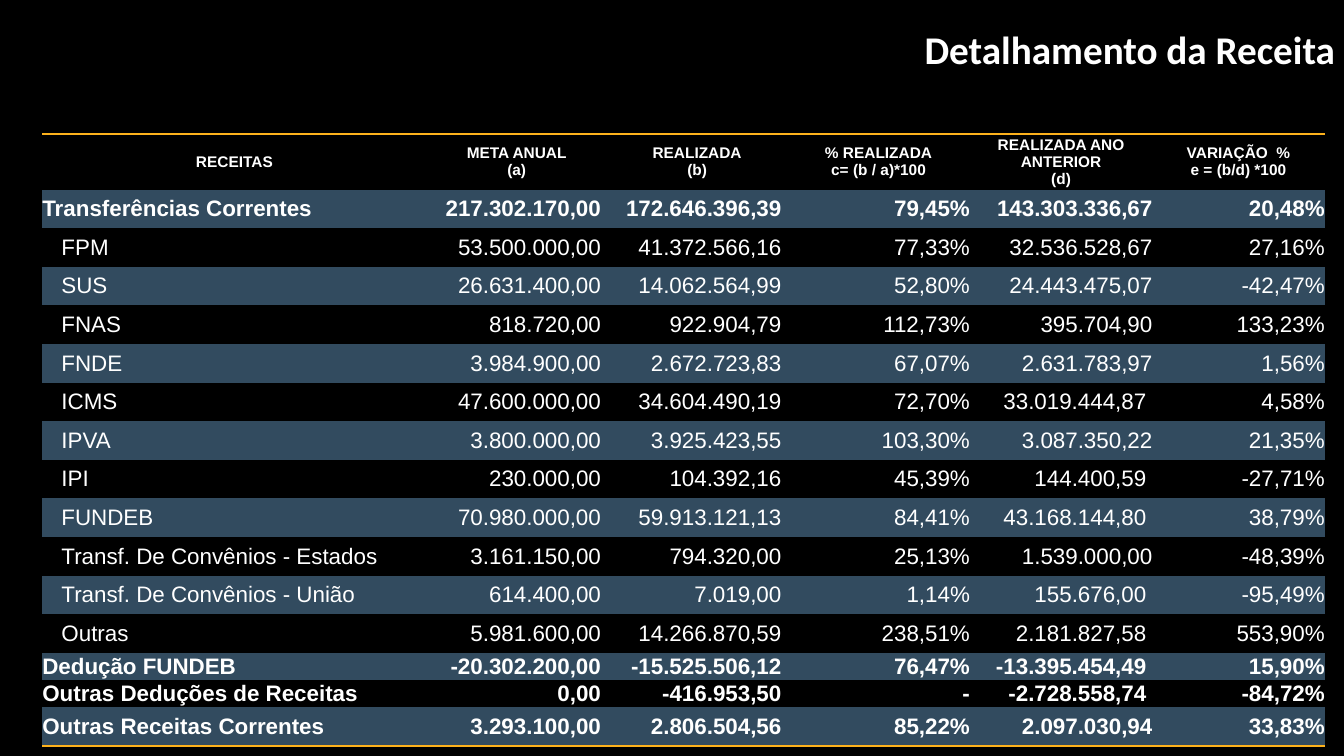
from lxml.etree import SubElement
from pptx import Presentation
from pptx.dml.color import RGBColor
from pptx.enum.text import MSO_ANCHOR, MSO_AUTO_SIZE, PP_ALIGN
from pptx.oxml.ns import qn
from pptx.util import Inches, Pt

COLORS = {"background": "000000", "text": "FFFFFF", "band": "324B5F", "rule": "FCB11C"}
NO_GRID_STYLE = "{2D5ABB26-0587-4C30-8999-92F81FD0307C}"

HEADERS = [
    "RECEITAS",
    "META ANUAL\n(a)",
    "REALIZADA\n(b)",
    "% REALIZADA\nc= (b / a)*100",
    "REALIZADA ANO ANTERIOR\n(d)",
    "VARIAÇÃO  %\ne = (b/d) *100",
]
REVENUES = [
    ["Transferências Correntes", "217.302.170,00", "172.646.396,39", "79,45%", "143.303.336,67", "20,48%"],
    ["FPM", "53.500.000,00", "41.372.566,16", "77,33%", "32.536.528,67", "27,16%"],
    ["SUS", "26.631.400,00", "14.062.564,99", "52,80%", "24.443.475,07", "-42,47%"],
    ["FNAS", "818.720,00", "922.904,79", "112,73%", "395.704,90", "133,23%"],
    ["FNDE", "3.984.900,00", "2.672.723,83", "67,07%", "2.631.783,97", "1,56%"],
    ["ICMS", "47.600.000,00", "34.604.490,19", "72,70%", "33.019.444,87", "4,58%"],
    ["IPVA", "3.800.000,00", "3.925.423,55", "103,30%", "3.087.350,22", "21,35%"],
    ["IPI", "230.000,00", "104.392,16", "45,39%", "144.400,59", "-27,71%"],
    ["FUNDEB", "70.980.000,00", "59.913.121,13", "84,41%", "43.168.144,80", "38,79%"],
    ["Transf. De Convênios - Estados", "3.161.150,00", "794.320,00", "25,13%", "1.539.000,00", "-48,39%"],
    ["Transf. De Convênios - União", "614.400,00", "7.019,00", "1,14%", "155.676,00", "-95,49%"],
    ["Outras", "5.981.600,00", "14.266.870,59", "238,51%", "2.181.827,58", "553,90%"],
    ["Dedução FUNDEB", "-20.302.200,00", "-15.525.506,12", "76,47%", "-13.395.454,49", "15,90%"],
    ["Outras Deduções de Receitas", "0,00", "-416.953,50", "-", "-2.728.558,74", "-84,72%"],
    ["Outras Receitas Correntes", "3.293.100,00", "2.806.504,56", "85,22%", "2.097.030,94", "33,83%"],
]
COLUMN_WIDTHS = [3.81, 1.79, 1.79, 1.81, 1.81, 1.71]
TABLE_HEIGHT, HEADER_HEIGHT, DEDUCTION_HEIGHT = 6.07, 0.55, 0.27
TOTALS = {"Transferências Correntes", "Outras Receitas Correntes"}
DEDUCTIONS = {"Dedução FUNDEB", "Outras Deduções de Receitas"}
# Rows whose previous-year amount stands slightly off the column edge
INSET_PREVIOUS_YEAR = DEDUCTIONS | {
    "ICMS", "IPI", "FUNDEB", "Transf. De Convênios - União", "Outras"}


def write_text(frame, text, *, size, font="Arial", bold=False,
               align=PP_ALIGN.LEFT, color="text"):
    for index, line in enumerate(text.split("\n")):
        paragraph = frame.paragraphs[0] if index == 0 else frame.add_paragraph()
        paragraph.alignment = align
        run = paragraph.add_run()
        run.text = line
        run.font.name = font
        run.font.size = Pt(size)
        run.font.bold = bold
        run.font.color.rgb = RGBColor.from_string(COLORS[color])


class RevenueSlide:
    def __init__(self, presentation):
        self.slide = presentation.slides.add_slide(presentation.slide_layouts[6])
        fill = self.slide.background.fill
        fill.solid()
        fill.fore_color.rgb = RGBColor.from_string(COLORS["background"])

    def title(self, text, left, top, width, height):
        box = self.slide.shapes.add_textbox(
            Inches(left), Inches(top), Inches(width), Inches(height))
        box.text_frame.word_wrap = True
        box.text_frame.auto_size = MSO_AUTO_SIZE.SHAPE_TO_FIT_TEXT
        write_text(box.text_frame, text, size=28, font="Calibri", bold=True,
                   align=PP_ALIGN.RIGHT)

    def table(self, rows, left, top, widths, heights):
        table = self.slide.shapes.add_table(
            len(rows), len(widths), Inches(left), Inches(top),
            Inches(sum(widths)), Inches(sum(heights))).table
        table.first_row = table.horz_banding = False
        table._tbl.tblPr.find(qn("a:tableStyleId")).text = NO_GRID_STYLE
        for column, width in zip(table.columns, widths):
            column.width = Inches(width)
        for row, height in zip(table.rows, heights):
            row.height = Inches(height)
        for row_index, values in enumerate(rows):
            for column_index, value in enumerate(values):
                cell = table.cell(row_index, column_index)
                if row_index == 0:
                    self.rule(cell, "a:lnT")
                elif row_index == len(rows) - 1:
                    self.rule(cell, "a:lnB")
                self.cell(cell, value, row_index, column_index, values[0])

    def cell(self, cell, text, row_index, column_index, name):
        is_header = row_index == 0
        is_main = is_header or name in TOTALS | DEDUCTIONS
        cell.vertical_anchor = MSO_ANCHOR.MIDDLE
        cell.margin_left = cell.margin_right = cell.margin_top = cell.margin_bottom = 0
        if column_index == 0 and not is_main:
            cell.margin_left = Inches(0.19)
        if not is_header and (column_index in (1, 2) or
                              column_index == 4 and name in INSET_PREVIOUS_YEAR):
            cell.margin_right = Inches(0.06)
        if row_index % 2:
            cell.fill.solid()
            cell.fill.fore_color.rgb = RGBColor.from_string(COLORS["band"])
        else:
            cell.fill.background()
        if is_header:
            align = PP_ALIGN.CENTER
        else:
            align = PP_ALIGN.RIGHT if column_index else PP_ALIGN.LEFT
        write_text(cell.text_frame, text, size=11 if is_header else 16,
                   bold=is_main, align=align)

    def rule(self, cell, side):
        line = SubElement(cell._tc.get_or_add_tcPr(), qn(side), w=str(Pt(1)))
        fill = SubElement(line, qn("a:solidFill"))
        SubElement(fill, qn("a:srgbClr"), val=COLORS["rule"])


def main():
    presentation = Presentation()
    presentation.slide_width = Inches(13.33)
    presentation.slide_height = Inches(7.5)
    slide = RevenueSlide(presentation)

    # Title
    slide.title("Detalhamento da Receita", 4.91, 0.2, 8.43, 0.57)

    # Revenue table: regular rows share the height left by the others
    regular_height = ((TABLE_HEIGHT - HEADER_HEIGHT - DEDUCTION_HEIGHT * len(DEDUCTIONS))
                      / (len(REVENUES) - len(DEDUCTIONS)))
    heights = [HEADER_HEIGHT] + [
        DEDUCTION_HEIGHT if row[0] in DEDUCTIONS else regular_height for row in REVENUES]
    slide.table([HEADERS] + REVENUES, 0.42, 1.33, COLUMN_WIDTHS, heights)

    presentation.save("out.pptx")


if __name__ == "__main__":
    main()
